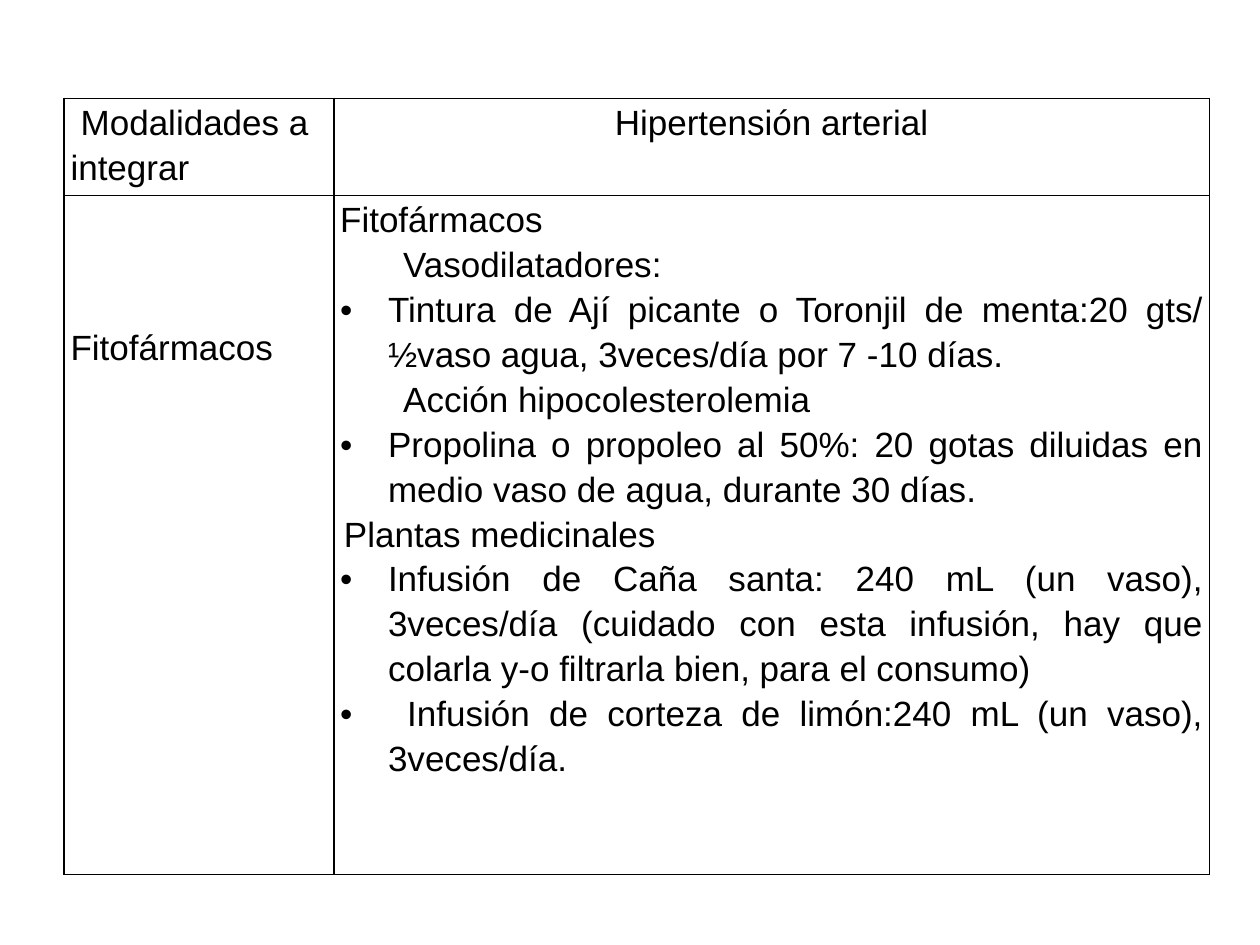
from lxml import etree
from pptx import Presentation
from pptx import util as u
from pptx.dml.color import RGBColor
from pptx.enum import text
from pptx.oxml.ns import qn

COLORS = {"ink": "000000"}
LEFT, TOP = 0.51, 0.78
COLUMNS = (2.14, 6.95)
ROWS = (0.77, 5.39)
SIDE_MARGIN = 0.05
BORDER_WIDTH = 1

ALIGN = text.PP_ALIGN
STYLES = {
    "label": {"align": ALIGN.LEFT, "left": 0, "first": 0},
    "corner": {"align": ALIGN.LEFT, "left": 0, "first": 0.08},
    "heading": {"align": ALIGN.CENTER, "left": 0, "first": 0},
    "group": {"align": ALIGN.JUSTIFY, "left": 0, "first": 0},
    "plants": {"align": ALIGN.JUSTIFY, "left": 0.03, "first": 0},
    "action": {"align": ALIGN.JUSTIFY, "left": 0.5, "first": 0},
    "remedy": {"align": ALIGN.JUSTIFY, "left": 0.38, "first": -0.38, "bullet": "•"},
}

CELLS = [
    [
        {"top": 0, "lines": [("corner", "Modalidades a integrar")]},
        {"top": 0, "lines": [("heading", "Hipertensión arterial")]},
    ],
    [
        {"top": 1.01, "lines": [("label", "Fitofármacos")]},
        {"top": 0, "lines": [
            ("group", "Fitofármacos"),
            ("action", "Vasodilatadores:"),
            ("remedy", "Tintura de Ají picante o Toronjil de menta:20 gts/ ½vaso agua, 3veces/día por 7 -10 días."),
            ("action", "Acción hipocolesterolemia"),
            ("remedy", "Propolina o propoleo al 50%: 20 gotas diluidas en medio vaso de agua, durante 30 días."),
            ("plants", "Plantas medicinales"),
            ("remedy", "Infusión de Caña santa: 240 mL (un vaso), 3veces/día (cuidado con esta infusión, "
                       "hay que colarla y-o filtrarla bien, para el consumo)"),
            ("remedy", " Infusión de corteza de limón:240 mL (un vaso), 3veces/día."),
        ]},
    ],
]

FONT = {"name": "Arial", "size": u.Pt(20), "bold": False}


def apply(target, values):
    for key, value in values.items():
        setattr(target, key, value)


def add_borders(cell):
    properties = cell._tc.get_or_add_tcPr()
    for side in ("lnL", "lnR", "lnT", "lnB"):
        line = etree.SubElement(properties, qn(f"a:{side}"), w=str(u.Pt(BORDER_WIDTH)))
        fill = etree.SubElement(line, qn("a:solidFill"))
        etree.SubElement(fill, qn("a:srgbClr"), val=COLORS["ink"])


def write_line(paragraph, style, wording):
    properties = paragraph._p.get_or_add_pPr()
    properties.set("marL", str(u.Inches(style["left"])))
    properties.set("indent", str(u.Inches(style["first"])))
    if "bullet" in style:
        etree.SubElement(properties, qn("a:buFont"), typeface=FONT["name"])
        etree.SubElement(properties, qn("a:buChar"), char=style["bullet"])
    apply(paragraph, {"alignment": style["align"], "line_spacing": 1.15})
    run = paragraph.add_run()
    run.text = wording
    apply(run.font, FONT)
    run.font.color.rgb = RGBColor.from_string(COLORS["ink"])


def fill_cell(cell, content):
    add_borders(cell)
    cell.fill.background()
    apply(cell, {
        "margin_left": u.Inches(SIDE_MARGIN),
        "margin_right": u.Inches(SIDE_MARGIN),
        "margin_top": u.Inches(content["top"]),
        "margin_bottom": 0,
    })
    frame = cell.text_frame
    for index, (style, wording) in enumerate(content["lines"]):
        paragraph = frame.add_paragraph() if index else frame.paragraphs[0]
        write_line(paragraph, STYLES[style], wording)


def main():
    deck = Presentation()
    apply(deck, {"slide_width": u.Inches(10), "slide_height": u.Inches(7.5)})
    slide = deck.slides.add_slide(deck.slide_layouts[6])
    treatments = slide.shapes.add_table(
        len(ROWS), len(COLUMNS), u.Inches(LEFT), u.Inches(TOP),
        u.Inches(sum(COLUMNS)), u.Inches(sum(ROWS))).table
    apply(treatments, {"first_row": False, "horz_banding": False})
    for column, width in zip(treatments.columns, COLUMNS):
        column.width = u.Inches(width)
    for row, height, contents in zip(treatments.rows, ROWS, CELLS):
        row.height = u.Inches(height)
        for cell, content in zip(row.cells, contents):
            fill_cell(cell, content)
    deck.save("out.pptx")


if __name__ == "__main__":
    main()
